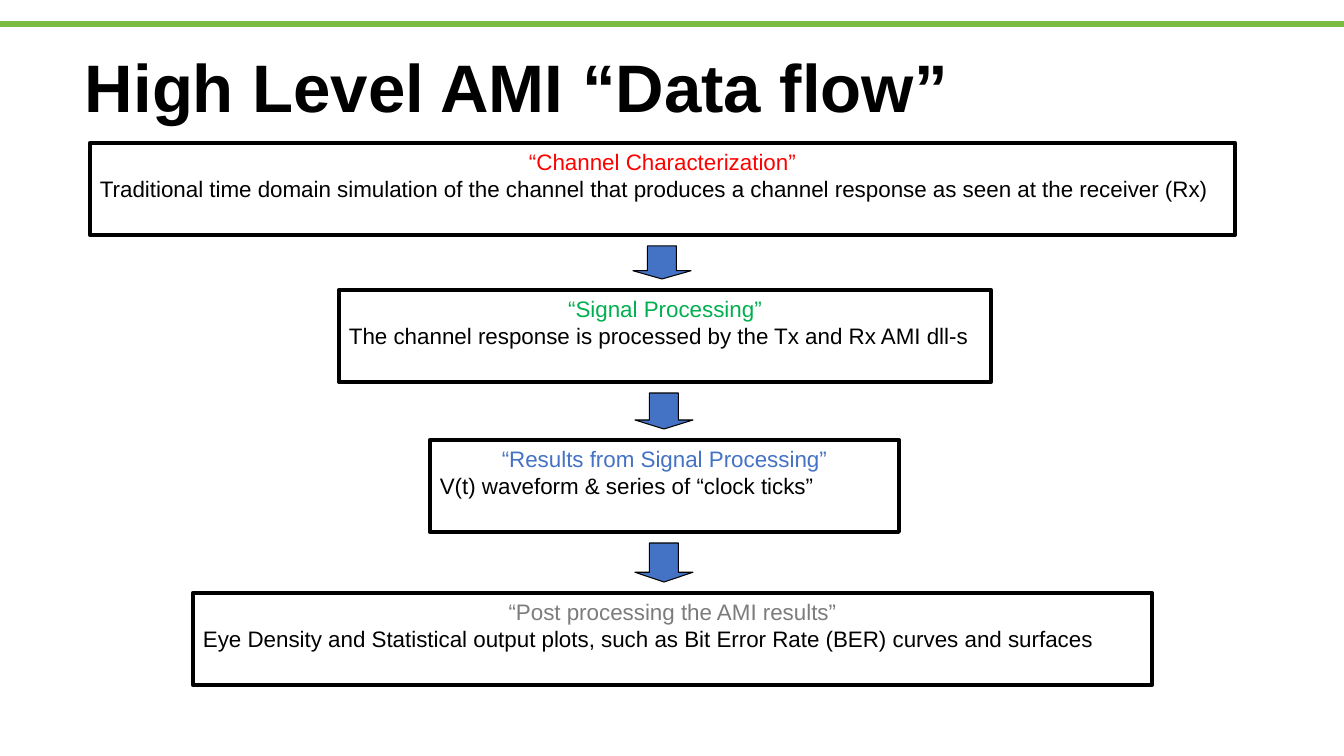
from lxml import etree
from pptx import Presentation
from pptx import util as u
from pptx.dml.color import RGBColor
from pptx.enum import shapes, text
from pptx.oxml.ns import qn

PX = 914400 / 100.8
TITLE = "High Level AMI “Data flow”"
BOX_H = 92
STAGES = [
    (90, 143, 1145, "FF0000", "“Channel Characterization”",
     "Traditional time domain simulation of the channel that produces "
     "a channel response as seen at the receiver (Rx)"),
    (339, 290, 652, "00B050", "“Signal Processing”",
     "The channel response is processed by the Tx and Rx AMI dll-s"),
    (430, 440, 469, "4472C4", "“Results from Signal Processing”",
     "V(t) waveform & series of “clock ticks”"),
    (193, 593, 959, "7C7C7C", "“Post processing the AMI results”",
     "Eye Density and Statistical output plots, such as Bit Error Rate (BER) "
     "curves and surfaces"),
]
ARROW_W, ARROW_GAP = 58, 11
ARROW_LEFTS = [633, 635, 635]


def px(*lengths):
    return [u.Emu(round(n * PX)) for n in lengths]


def rgb(color):
    return RGBColor.from_string(color)


def add_run(p, words, size, color, bold=False):
    r = p.add_run()
    r.text = words
    r.font.name, r.font.size, r.font.bold = "Arial", u.Pt(size), bold
    r.font.color.rgb = rgb(color)


def add_outlined(s, kind, box, width, fill=None):
    sp = s.shapes.add_shape(kind, *px(*box))
    sp.shadow.inherit = False
    if fill:
        sp.fill.solid()
        sp.fill.fore_color.rgb = rgb(fill)
    else:
        sp.fill.background()
    sp.line.color.rgb = rgb("000000")
    sp.line.width = u.Pt(width)
    return sp


def add_stage(s, left, top, width, color, heading, detail):
    sp = add_outlined(s, shapes.MSO_SHAPE.RECTANGLE, (left, top, width, BOX_H), 3)
    tf = sp.text_frame
    tf.word_wrap = True
    tf.vertical_anchor = text.MSO_ANCHOR.TOP
    p = tf.paragraphs[0]
    p.alignment = text.PP_ALIGN.CENTER
    add_run(p, heading, 16, color)
    p = tf.add_paragraph()
    p.alignment = text.PP_ALIGN.LEFT
    add_run(p, detail, 16, "000000")


def main():
    """Build the AMI data flow slide."""
    prs = Presentation()
    prs.slide_width, prs.slide_height = px(1344, 756)
    s = prs.slides.add_slide(prs.slide_layouts[6])

    rule = s.shapes.add_connector(shapes.MSO_CONNECTOR.STRAIGHT, *px(-2, 24, 1344, 24))
    rule.line.color.rgb = rgb("7BBC42")
    rule.line.width = u.Pt(4.5)
    etree.SubElement(rule._element.spPr, qn("a:effectLst"))

    tf = s.shapes.add_textbox(*px(75, 34, 1242, 114)).text_frame
    tf.word_wrap = True
    tf.vertical_anchor = text.MSO_ANCHOR.MIDDLE
    p = tf.paragraphs[0]
    p.line_spacing = 0.9
    add_run(p, TITLE, 48, "000000", True)

    for stage in STAGES:
        add_stage(s, *stage)

    for left, above, below in zip(ARROW_LEFTS, STAGES, STAGES[1:]):
        top = above[1] + BOX_H + ARROW_GAP
        height = below[1] - ARROW_GAP - top
        sp = add_outlined(s, shapes.MSO_SHAPE.DOWN_ARROW,
                          (left, top, ARROW_W, height), 0.75, "4472C4")
        sp.adjustments[0], sp.adjustments[1] = 0.5, 0.25

    prs.save("out.pptx")


if __name__ == "__main__":
    main()
